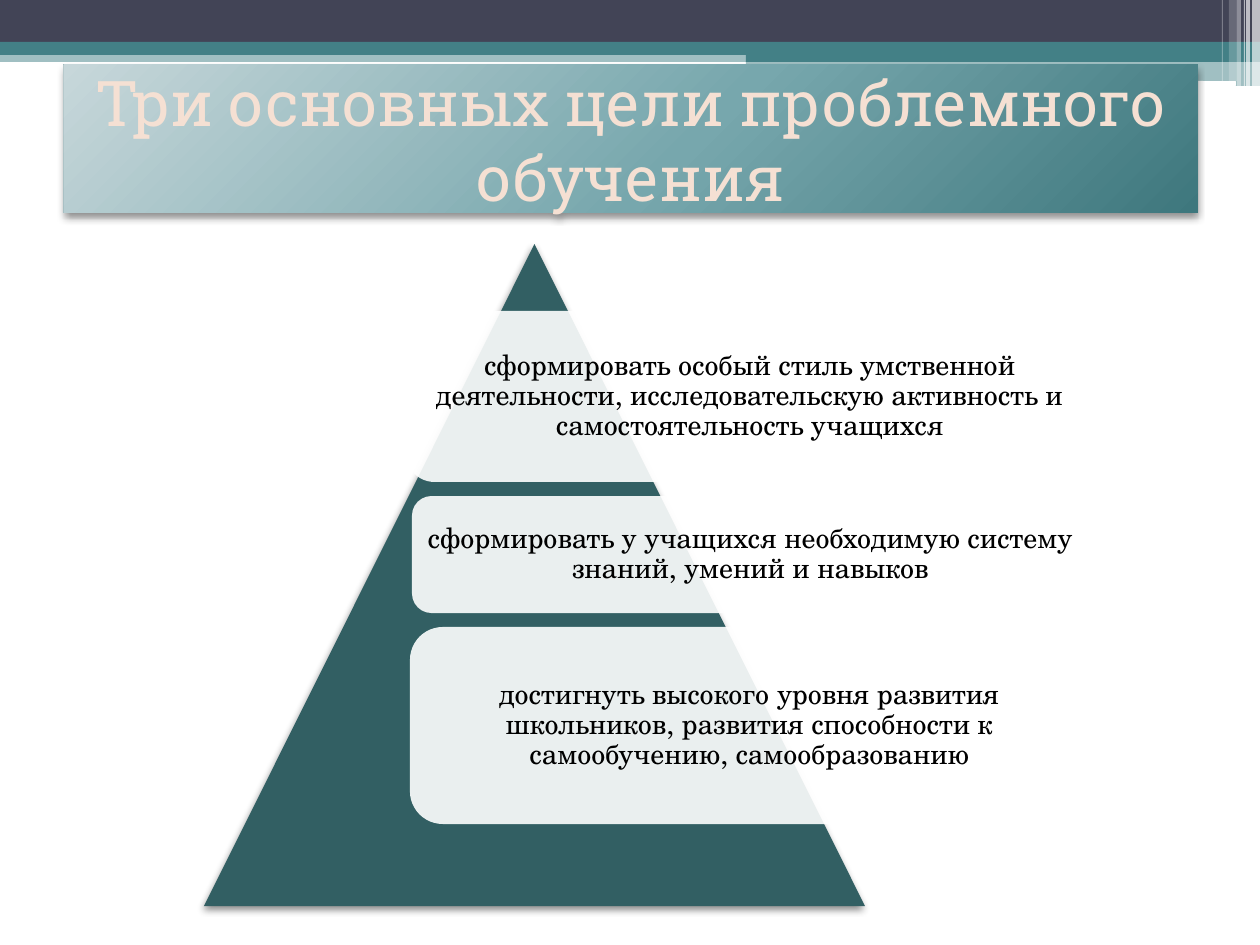
import pptx
import pptx.dml.color
import pptx.enum.shapes
import pptx.enum.text
import pptx.oxml
import pptx.oxml.ns
import pptx.util

PX = 914400 / 126
SLIDE_BOX = (0, 0, 1260, 945)
COLORS = {
    "navy": "424456", "teal": "438086", "white": "FFFFFF", "pyramid": "325F63",
    "title": "F5E0D3", "text": "000000", "shadow": "000000",
    "light": "C7D7DA", "middle": "77A7AD", "dark": "3E777D",
}
SHAPES = pptx.enum.shapes.MSO_SHAPE
TITLE_FONT = {"name": "Roboto Slab", "size": pptx.util.Pt(36)}
GOAL_FONT = {"name": "TeX Gyre Schola", "size": pptx.util.Pt(16)}
GOALS = [
    ((202, 67, 688, 171), "сформировать особый стиль умственной деятельности, "
     "исследовательскую активность и самостоятельность учащихся"),
    ((208, 252, 677, 117), "сформировать у учащихся необходимую систему "
     "знаний, умений и навыков"),
    ((206, 383, 679, 197), "достигнуть высокого уровня развития школьников, "
     "развития способности к самообучению, самообразованию"),
]


def emu(px):
    return pptx.util.Emu(round(px * PX))


def parse_drawing(xml):
    """Parse one DrawingML element, adding the namespace to its root tag."""
    tag = xml[1:].split(">")[0].split(" ")[0]
    return pptx.oxml.parse_xml(xml.replace(f"<{tag}", f"<{tag} {pptx.oxml.ns.nsdecls('a')}", 1))


def add_block(slide, kind, box, part, color, opacity=100):
    """Add a borderless shape; part is placed relative to the origin of box."""
    left, top, width, height = part
    block = slide.shapes.add_shape(
        kind, emu(box[0] + left), emu(box[1] + top), emu(width), emu(height))
    block.shadow.inherit = False
    block.line.fill.background()
    block.fill.solid()
    block.fill.fore_color.rgb = pptx.dml.color.RGBColor.from_string(COLORS[color])
    if opacity < 100:
        tint = block._element.spPr.find(".//" + pptx.oxml.ns.qn("a:srgbClr"))
        tint.append(parse_drawing(f'<a:alpha val="{opacity * 1000}"/>'))
    return block


def add_soft_shadow(block):
    effects = block._element.spPr.find(pptx.oxml.ns.qn("a:effectLst"))
    effects.append(parse_drawing(
        '<a:outerShdw blurRad="50800" dist="25400" dir="5400000" rotWithShape="0">'
        f'<a:srgbClr val="{COLORS["shadow"]}"><a:alpha val="45000"/></a:srgbClr>'
        '</a:outerShdw>'))


def set_gradient(block):
    stops = "".join(
        f'<a:gs pos="{position * 1000}"><a:srgbClr val="{COLORS[color]}"/></a:gs>'
        for position, color in ((0, "light"), (55, "middle"), (100, "dark")))
    solid = block._element.spPr.find(pptx.oxml.ns.qn("a:solidFill"))
    solid.getparent().replace(solid, parse_drawing(
        f'<a:gradFill rotWithShape="1"><a:gsLst>{stops}</a:gsLst><a:path path="circle">'
        '<a:fillToRect l="-40000" t="-90000" r="140000" b="190000"/>'
        '</a:path></a:gradFill>'))


def write_centered(block, text, font, color, insets, line_spacing=1.0):
    frame = block.text_frame
    frame_format = {
        "word_wrap": True, "vertical_anchor": pptx.enum.text.MSO_ANCHOR.MIDDLE,
        "margin_left": emu(insets[0]), "margin_right": emu(insets[0]),
        "margin_top": emu(insets[1]), "margin_bottom": emu(insets[1]),
    }
    for name, value in frame_format.items():
        setattr(frame, name, value)
    paragraph = frame.paragraphs[0]
    paragraph.alignment = pptx.enum.text.PP_ALIGN.CENTER
    paragraph.line_spacing = line_spacing
    run = paragraph.add_run()
    run.text = text
    for name, value in font.items():
        setattr(run.font, name, value)
    run.font.color.rgb = pptx.dml.color.RGBColor.from_string(COLORS[color])


def add_header_bands(slide, box):
    width = box[2]
    step = 746
    bands = [
        ((0, 50, width, 12), "teal", 50),
        ((0, 0, width, 43), "navy", 100),
        ((0, 42, width, 13), "teal", 100),
        ((step, 49, width - step, 13), "teal", 100),
        ((step, 61, width - step, 25), "teal", 50),
    ]
    for part, color, opacity in bands:
        add_block(slide, SHAPES.RECTANGLE, box, part, color, opacity)
    for part in ((745, 68, 422, 4), (1016, 81, 220, 5)):
        add_block(slide, SHAPES.ROUNDED_RECTANGLE, box, part, "white")
    stripes = [(1252, 8, 86, 65), (1246, 4, 86, 65), (1244, 1, 86, 60),
               (1237, 4, 86, 40), (1229, 8, 81, 20), (1222, 1, 81, 30)]
    for left, stripe_width, height, opacity in stripes:
        add_block(slide, SHAPES.RECTANGLE, box, (left, 0, stripe_width, height),
                  "white", opacity)


def add_title(slide, box):
    banner = add_block(slide, SHAPES.RECTANGLE, box, (0, 0, *box[2:]), "middle")
    set_gradient(banner)
    add_soft_shadow(banner)
    write_centered(banner, "Три основных цели проблемного обучения",
                   TITLE_FONT, "title", (13, 6))


def add_goal_pyramid(slide, box):
    pyramid = add_block(slide, SHAPES.ISOSCELES_TRIANGLE, box, (0, 0, *box[2:]), "pyramid")
    add_soft_shadow(pyramid)
    for part, goal in GOALS:
        card = add_block(slide, SHAPES.ROUNDED_RECTANGLE, box, part, "white", 90)
        write_centered(card, goal, GOAL_FONT, "text", (3, 3), line_spacing=0.9)


def main():
    deck = pptx.Presentation()
    deck.slide_width, deck.slide_height = emu(SLIDE_BOX[2]), emu(SLIDE_BOX[3])
    slide = deck.slides.add_slide(deck.slide_layouts[6])
    add_header_bands(slide, SLIDE_BOX)
    add_title(slide, (64, 65, 1134, 148))
    add_goal_pyramid(slide, (204, 244, 661, 662))
    deck.save("out.pptx")


if __name__ == "__main__":
    main()
